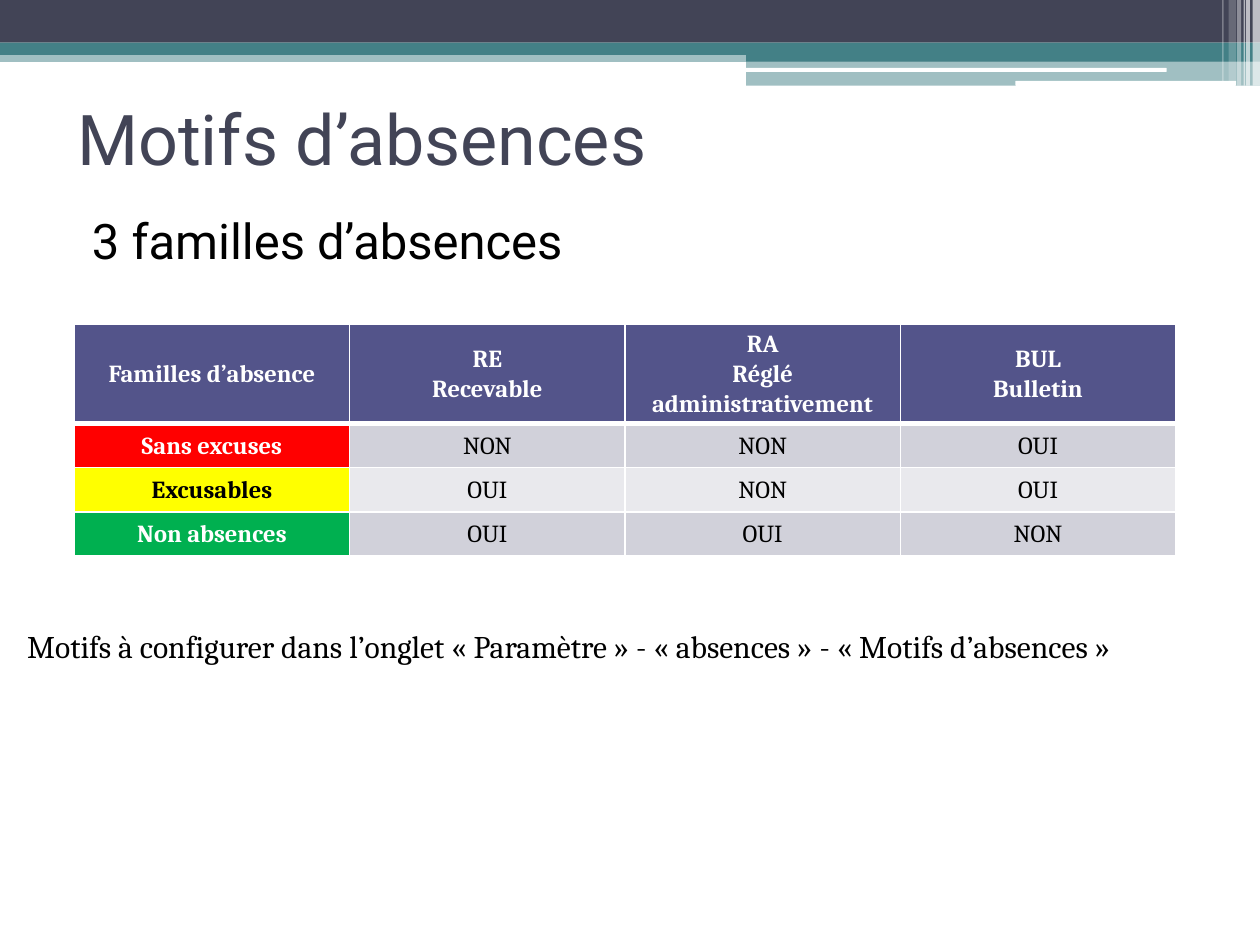
from dataclasses import dataclass
from typing import Any

from lxml import etree
from pptx import Presentation
from pptx.dml.color import RGBColor
from pptx.enum import shapes, text
from pptx.oxml import ns
from pptx.util import Cm, Pt


@dataclass(frozen=True)
class Theme:
    dark: str = "424456"
    teal: str = "438086"
    header: str = "53548A"
    odd_row: str = "D1D1DA"
    even_row: str = "E9E9ED"
    red: str = "FF0000"
    yellow: str = "FFFF00"
    green: str = "00B050"
    white: str = "FFFFFF"
    black: str = "000000"
    sans: str = "Roboto"
    serif: str = "Cambria"
    title_size: int = 40
    body_size: int = 28
    note_size: int = 18
    cell_size: int = 14


@dataclass(frozen=True)
class Band:
    """A decorative bar, in centimetres, with its opacity in percent."""
    left: float
    top: float
    width: float
    height: float
    color: str
    opacity: int = 100
    kind: Any = shapes.MSO_SHAPE.RECTANGLE


@dataclass(frozen=True)
class Family:
    name: str
    answers: tuple[str, ...]
    color: str
    name_color: str
    row_color: str


T = Theme()
ROUNDED = shapes.MSO_SHAPE.ROUNDED_RECTANGLE
BANDS = [
    Band(0, 1.02, 25.4, 0.23, T.teal, 50),
    Band(0, 0, 25.4, 0.86, T.dark),
    Band(0, 0.86, 25.4, 0.25, T.teal),
    Band(15.04, 0.99, 10.36, 0.25, T.teal),
    Band(15.04, 1.22, 10.36, 0.51, T.teal, 50),
    Band(15.01, 1.37, 8.51, 0.08, T.white, kind=ROUNDED),
    Band(20.47, 1.63, 4.45, 0.1, T.white, kind=ROUNDED),
    Band(25.25, 0, 0.15, 1.73, T.white, 65),
    Band(25.12, 0, 0.08, 1.73, T.white, 65),
    Band(25.07, 0, 0.03, 1.73, T.white, 60),
    Band(24.94, 0, 0.08, 1.73, T.white, 40),
    Band(24.77, 0, 0.15, 1.63, T.white, 20),
    Band(24.64, 0, 0.03, 1.63, T.white, 30),
]
HEADINGS = ["Familles d’absence", "RE\nRecevable",
            "RA\nRéglé administrativement", "BUL\nBulletin"]
FAMILIES = [
    Family("Sans excuses", ("NON", "NON", "OUI"), T.red, T.white, T.odd_row),
    Family("Excusables", ("OUI", "NON", "OUI"), T.yellow, T.black, T.even_row),
    Family("Non absences", ("OUI", "OUI", "NON"), T.green, T.white, T.odd_row),
]


def set_attrs(obj: Any, **values: Any) -> None:
    for name, value in values.items():
        setattr(obj, name, value)


def place(sp: Any, left: float, top: float, width: float, height: float) -> None:
    set_attrs(sp, left=Cm(left), top=Cm(top), width=Cm(width), height=Cm(height))


def write(tf: Any, content: str, font: str, size: int, color: str,
          bold: bool = False, **paragraph: Any) -> None:
    """Fill a text frame, one paragraph per line, all in one format."""
    tf.text = content
    for p in tf.paragraphs:
        set_attrs(p, **paragraph)
        for r in p.runs:
            set_attrs(r.font, name=font, size=Pt(size), bold=bold)
            r.font.color.rgb = RGBColor.from_string(color)


def draw_band(s: Any, band: Band) -> None:
    sp = s.shapes.add_shape(band.kind, Cm(band.left), Cm(band.top),
                            Cm(band.width), Cm(band.height))
    sp.shadow.inherit = False
    sp.line.fill.background()
    sp.fill.solid()
    sp.fill.fore_color.rgb = RGBColor.from_string(band.color)
    if band.opacity < 100:
        rgb = sp.element.spPr.find(".//" + ns.qn("a:srgbClr"))
        etree.SubElement(rgb, ns.qn("a:alpha"), val=str(band.opacity * 1000))


def add_borders(cell: Any, top: int, bottom: int) -> None:
    """Draw white cell borders; must run before the cell is filled."""
    tc_pr = cell._tc.get_or_add_tcPr()
    for side, width in {"L": 1, "R": 1, "T": top, "B": bottom}.items():
        ln = etree.SubElement(tc_pr, ns.qn(f"a:ln{side}"), w=str(Pt(width)))
        fill = etree.SubElement(ln, ns.qn("a:solidFill"))
        etree.SubElement(fill, ns.qn("a:srgbClr"), val=T.white)


def draw_cell(table: Any, row: int, col: int, content: str, fill: str,
              color: str, bold: bool) -> None:
    cell = table.cell(row, col)
    add_borders(cell, top=3 if row == 1 else 1, bottom=3 if row == 0 else 1)
    cell.fill.solid()
    cell.fill.fore_color.rgb = RGBColor.from_string(fill)
    set_attrs(cell, margin_left=Cm(0.18), margin_right=Cm(0.18), margin_top=0,
              margin_bottom=0, vertical_anchor=text.MSO_ANCHOR.MIDDLE)
    write(cell.text_frame, content, T.serif, T.cell_size, color, bold,
          alignment=text.PP_ALIGN.CENTER, line_spacing=1.07)


def draw_table(s: Any) -> None:
    table = s.shapes.add_table(len(FAMILIES) + 1, len(HEADINGS), Cm(1.5), Cm(6.53),
                               Cm(22.2), Cm(4.68)).table
    for i, row in enumerate(table.rows):
        row.height = Cm(0.89 if i else 2.01)
    for col, heading in enumerate(HEADINGS):
        draw_cell(table, 0, col, heading, T.header, T.white, True)
    for row, family in enumerate(FAMILIES, 1):
        draw_cell(table, row, 0, family.name, family.color, family.name_color, True)
        for col, answer in enumerate(family.answers, 1):
            draw_cell(table, row, col, answer, family.row_color, T.black, False)


def draw_title_and_body(s: Any) -> None:
    title, body = s.placeholders
    for sp in (title, body):
        s.shapes.element.append(sp.element)
        sp.text_frame.auto_size = text.MSO_AUTO_SIZE.NONE
    place(title, 1.3, 1.32, 22.73, 2.92)
    title.text_frame.vertical_anchor = text.MSO_ANCHOR.MIDDLE
    write(title.text_frame, "Motifs d’absences", T.sans, T.title_size, T.dark,
          alignment=text.PP_ALIGN.LEFT)
    place(body, 1.3, 4.11, 22.86, 12.01)
    write(body.text_frame, "3 familles d’absences", T.sans, T.body_size, T.black,
          space_before=Pt(3))
    p_pr = body.text_frame.paragraphs[0]._p.get_or_add_pPr()
    p_pr.set("marL", str(Cm(0.3)))
    p_pr.set("indent", "0")
    etree.SubElement(p_pr, ns.qn("a:buNone"))


def draw_note(s: Any) -> None:
    tf = s.shapes.add_textbox(Cm(0.3), Cm(12.52), Cm(24.69), Cm(1.02)).text_frame
    set_attrs(tf, word_wrap=False, auto_size=text.MSO_AUTO_SIZE.SHAPE_TO_FIT_TEXT)
    write(tf, "Motifs à configurer dans l’onglet « Paramètre » - « absences » - "
              "« Motifs d’absences »", T.serif, T.note_size, T.black)


def main() -> None:
    prs = Presentation()
    set_attrs(prs, slide_width=Cm(25.4), slide_height=Cm(19.05))
    s = prs.slides.add_slide(prs.slide_layouts[1])
    for band in BANDS:
        draw_band(s, band)
    draw_title_and_body(s)
    draw_table(s)
    draw_note(s)
    prs.save("out.pptx")


if __name__ == "__main__":
    main()
